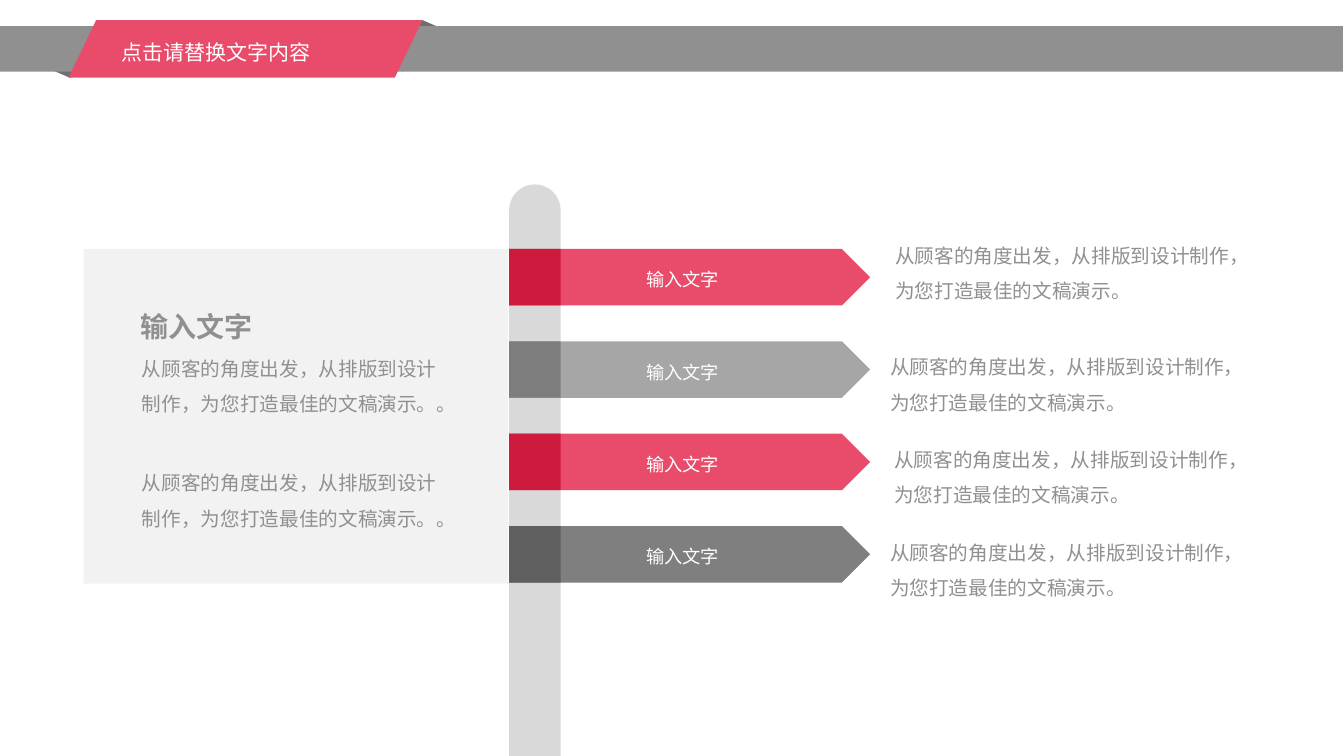
from dataclasses import dataclass

from lxml.etree import SubElement
from pptx import Presentation
from pptx.dml.color import RGBColor
from pptx.enum.shapes import MSO_SHAPE
from pptx.enum.text import MSO_ANCHOR, MSO_AUTO_SIZE, PP_ALIGN
from pptx.oxml.ns import qn
from pptx.shapes.autoshape import Shape
from pptx.slide import Slide
from pptx.util import Inches, Pt

PINK, GREY, DARK, WHITE = "E84C6A", "909090", "6F6F6F", "FFFFFF"
CJK = "Noto Sans CJK SC"
NOTE = "从顾客的角度出发，从排版到设计制作，为您打造最佳的文稿演示。"
LABEL = "输入文字"
POLE_LEFT, POLE_WIDTH = 5.05, 0.51
ARROW_TOP, ARROW_HIGH = 2.47, 0.56
ARROW_STEP = (5.22 - ARROW_TOP) / 3


@dataclass
class Box:
    left: float
    top: float
    width: float
    height: float

    def place(self) -> list[int]:
        return [Inches(n) for n in (self.left, self.top, self.width, self.height)]


@dataclass
class Style:
    size: float
    color: str
    font: str = "Arial"
    bold: bool = False
    space: float = 1.2
    align: PP_ALIGN = PP_ALIGN.LEFT


@dataclass
class Arrow:
    fill: str
    fold: str
    note: Box


BODY = Style(14, GREY, CJK, space=1.5)
TAG = Style(13, WHITE, align=PP_ALIGN.CENTER)
HEAD = Style(20, GREY, bold=True)
TITLE = Style(15, WHITE, space=1.5)

ARROWS = [
    Arrow(PINK, "CD1A3D", Box(8.78, 2.25, 3.56, 0.81)),
    Arrow("A6A6A6", "7D7D7D", Box(8.73, 3.36, 3.56, 1.16)),
    Arrow(PINK, "CD1A3D", Box(8.77, 4.28, 3.56, 1.16)),
    Arrow("7F7F7F", "5F5F5F", Box(8.73, 5.2, 3.56, 1.16)),
]


def paint(color: str) -> RGBColor:
    return RGBColor.from_string(color)


def write(shape: Shape, text: str, style: Style, anchor: MSO_ANCHOR) -> None:
    frame = shape.text_frame
    frame.text = text
    layout = {
        "word_wrap": True,
        "auto_size": MSO_AUTO_SIZE.NONE,
        "vertical_anchor": anchor,
    }
    for name, value in layout.items():
        setattr(frame, name, value)
    para = frame.paragraphs[0]
    para.alignment, para.line_spacing = style.align, style.space
    font = para.runs[0].font
    look = {"size": Pt(style.size), "name": style.font, "bold": style.bold}
    for name, value in look.items():
        setattr(font, name, value)
    font.color.rgb = paint(style.color)
    for latin in shape.element.iter(qn("a:latin")):
        east = SubElement(latin.getparent(), qn("a:ea"))
        east.set("typeface", CJK)


def add_form(slide: Slide, kind: MSO_SHAPE, box: Box, color: str) -> Shape:
    shape = slide.shapes.add_shape(kind, *box.place())
    shape.shadow.inherit = False
    shape.fill.solid()
    shape.fill.fore_color.rgb = paint(color)
    shape.line.fill.background()
    return shape


def add_text(slide: Slide, text: str, box: Box, style: Style) -> None:
    write(slide.shapes.add_textbox(*box.place()), text, style, MSO_ANCHOR.TOP)


def add_arrow(slide: Slide, arrow: Arrow, top: float) -> None:
    body = Box(POLE_LEFT, top, 3.58, ARROW_HIGH)
    shape = add_form(slide, MSO_SHAPE.PENTAGON, body, arrow.fill)
    write(shape, LABEL, TAG, MSO_ANCHOR.MIDDLE)
    fold = Box(POLE_LEFT, top, POLE_WIDTH, ARROW_HIGH)
    add_form(slide, MSO_SHAPE.RECTANGLE, fold, arrow.fold)
    add_text(slide, NOTE, arrow.note, BODY)


def add_panel(slide: Slide) -> None:
    add_form(slide, MSO_SHAPE.RECTANGLE, Box(0.83, ARROW_TOP, 4.21, 3.32), "F2F2F2")
    add_text(slide, LABEL, Box(1.29, 2.96, 1.59, 0.47), HEAD)
    for top in (3.37, 4.51):
        add_text(slide, NOTE + "。", Box(1.31, top, 3.29, 0.81), BODY)


def add_banner(slide: Slide) -> None:
    add_form(slide, MSO_SHAPE.ISOSCELES_TRIANGLE, Box(3.59, 0.2, 1.2, 0.26), DARK)
    lower = add_form(slide, MSO_SHAPE.ISOSCELES_TRIANGLE, Box(0.09, 0.51, 1.2, 0.26), DARK)
    lower.rotation = 180
    add_form(slide, MSO_SHAPE.RECTANGLE, Box(0, 0.26, 13.32, 0.45), GREY)
    ribbon = add_form(slide, MSO_SHAPE.PARALLELOGRAM, Box(0.68, 0.2, 3.51, 0.57), PINK)
    ribbon.adjustments[0] = 0.48


def set_title(slide: Slide) -> None:
    """Format the title and bring it in front of the banner."""
    title = slide.shapes.title
    place = Box(1.11, 0.22, 2.63, 0.48).place()
    for name, value in zip(("left", "top", "width", "height"), place):
        setattr(title, name, value)
    write(title, "点击请替换文字内容", TITLE, MSO_ANCHOR.TOP)
    title.element.getparent().append(title.element)


def main() -> None:
    deck = Presentation()
    deck.slide_width, deck.slide_height = Inches(13.33), Inches(7.5)
    slide = deck.slides.add_slide(deck.slide_layouts[5])
    pole = add_form(
        slide, MSO_SHAPE.ROUND_2_SAME_RECTANGLE,
        Box(POLE_LEFT, 1.83, POLE_WIDTH, 5.67), "D9D9D9",
    )
    pole.adjustments[0] = 0.5
    for row, arrow in enumerate(ARROWS):
        add_arrow(slide, arrow, ARROW_TOP + row * ARROW_STEP)
    add_panel(slide)
    add_banner(slide)
    set_title(slide)
    deck.save("out.pptx")


if __name__ == "__main__":
    main()
